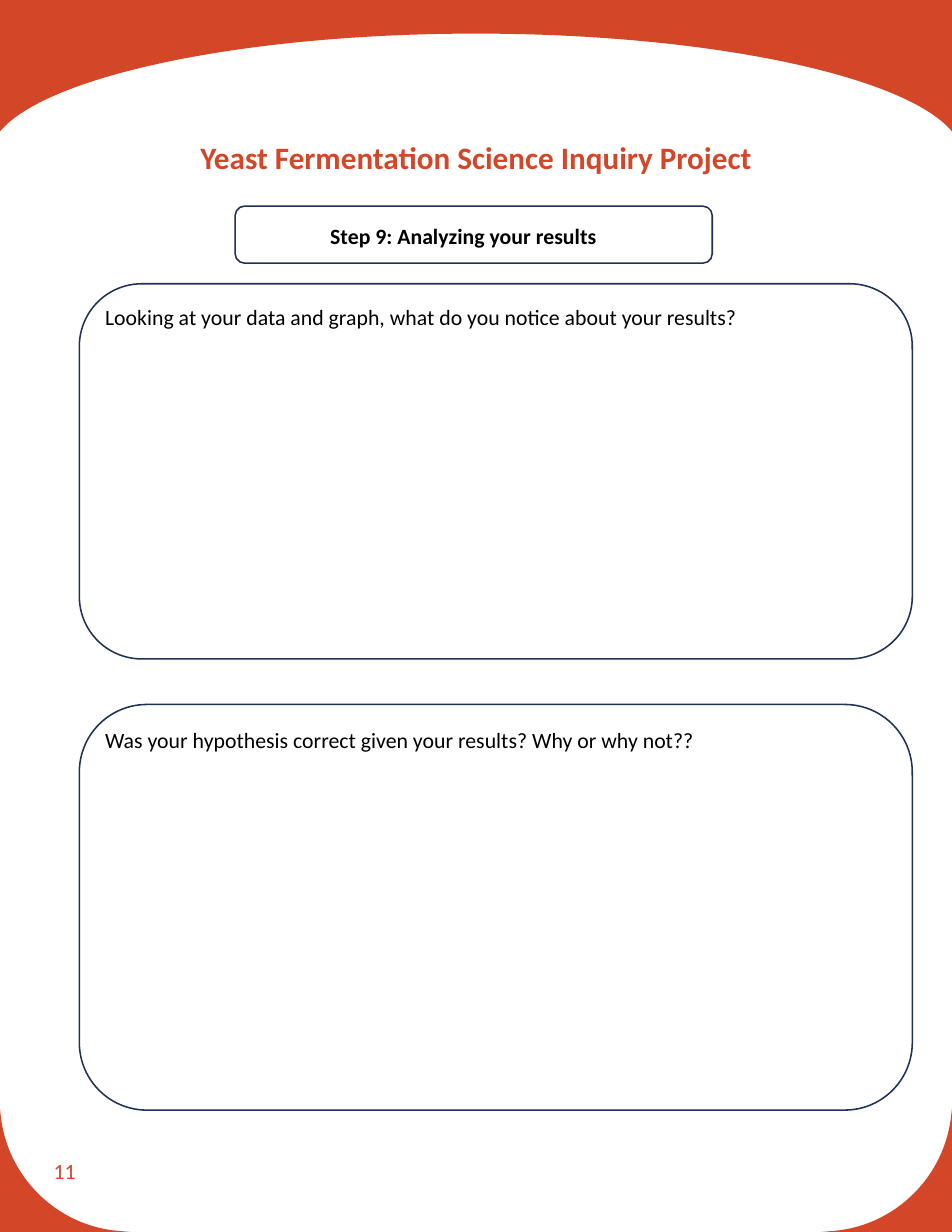
from lxml.etree import SubElement
from pptx import Presentation
from pptx.dml.color import RGBColor
from pptx.enum.shapes import MSO_SHAPE as Shape
from pptx.enum.text import MSO_ANCHOR as Anchor, MSO_AUTO_SIZE as AutoSize, PP_ALIGN as Align
from pptx.oxml.ns import qn
from pptx.util import Pt

ORANGE = RGBColor(0xD3, 0x47, 0x28)
NAVY = RGBColor(0x1E, 0x32, 0x56)
BLACK = RGBColor(0, 0, 0)
FONT = "Calibri"
WIDTH, HEIGHT = 612, 792

# Content: text, then left, top, width, height in points
TITLE = ("Yeast Fermentation Science Inquiry Project", (25.6, 78.5, 560.9, 61.9))
PAGE_NUMBER = ("11", (27.4, 731.5, 137.5, 42.5))
STEP = ("Step 9: Analyzing your results", (205.2, 139.7, 297.4, 24.5))
STEP_FRAME = (151.2, 132.5, 306.7, 36.7)
FRAME_LEFT, FRAME_WIDTH, QUESTION_LEFT = 51, 535.5, 60.5
QUESTIONS = [  # text, frame top and height, text top, width and height
    ("Looking at your data and graph, what do you notice about your results?",
     182.4, 241.2, 192, 501.8, 24.5),
    ("Was your hypothesis correct given your results? Why or why not??",
     452.9, 260.8, 463.6, 470.2, 33.8),
]

# Page edges as segments: one point is a line, three points are a curve
ARCH = [
    [(0, 0)], [(WIDTH, 0)], [(WIDTH, 85)], [(WIDTH, 84.5)],
    [(582.5, 49), (456.5, 21.6), (306, 21.6)],
    [(155.5, 21.6), (29.5, 49), (0, 84.5)], [(0, 85)],
]
CORNER = [
    [(0, 712.8)], [(0.4, 716.4)],
    [(4.3, 756), (36, 787.7), (75.6, 791.3)],
    [(84.2, HEIGHT)], [(0, HEIGHT)],
]


def mirror(segments):
    return [[(WIDTH - x, y) for x, y in segment] for segment in segments]


def add_area(page, segments):
    points = [(Pt(x), Pt(y)) for segment in segments for x, y in segment]
    builder = page.shapes.build_freeform(*points[0])
    builder.add_line_segments(points[1:], close=True)
    area = builder.convert_to_shape()
    area.shadow.inherit = False
    area.fill.solid()
    area.fill.fore_color.rgb = ORANGE
    area.line.fill.background()
    # Merge the three lines of each curve segment into one cubic curve
    lines = iter(area.element.xpath(".//a:lnTo"))
    for segment in segments[1:]:
        parts = [next(lines) for point in segment]
        if len(parts) == 3:
            outline = parts[0].getparent()
            bezier = SubElement(outline, qn("a:cubicBezTo"))
            outline.replace(parts[0], bezier)
            for part in parts:
                bezier.append(part[0])
            for part in parts[1:]:
                outline.remove(part)


def add_frame(page, bounds):
    frame = page.shapes.add_shape(Shape.ROUNDED_RECTANGLE, *map(Pt, bounds))
    frame.shadow.inherit = False
    frame.fill.background()
    frame.line.color.rgb = NAVY
    frame.line.width = Pt(1)


def add_text(page, text, bounds, size=14, color=BLACK, bold=False,
             anchor=Anchor.TOP, wrap=True, grow=False):
    box = page.shapes.add_textbox(*map(Pt, bounds))
    box.text_frame.word_wrap = wrap
    box.text_frame.vertical_anchor = anchor
    if grow:
        box.text_frame.auto_size = AutoSize.SHAPE_TO_FIT_TEXT
    para = box.text_frame.paragraphs[0]
    para.text = text
    para.font.name = FONT
    para.font.size = Pt(size)
    para.font.bold = bold
    para.font.color.rgb = color
    return para


deck = Presentation()
deck.slide_width, deck.slide_height = Pt(WIDTH), Pt(HEIGHT)
page = deck.slides.add_slide(deck.slide_layouts[6])

# Page edges: arch at the top, rounded corners at the bottom
for segments in (ARCH, CORNER, mirror(CORNER)):
    add_area(page, segments)

# Page number and title
add_text(page, *PAGE_NUMBER, color=ORANGE, anchor=Anchor.MIDDLE)
title = add_text(page, *TITLE, size=20, color=ORANGE, bold=True)
title.alignment = Align.CENTER
title.line_spacing = 1.3

# Step heading
add_frame(page, STEP_FRAME)
add_text(page, *STEP, bold=True, grow=True)

# Question frames
for question, top, height, text_top, text_width, text_height in QUESTIONS:
    add_frame(page, (FRAME_LEFT, top, FRAME_WIDTH, height))
    add_text(page, question, (QUESTION_LEFT, text_top, text_width, text_height),
             wrap=False, grow=True)

deck.save("out.pptx")
